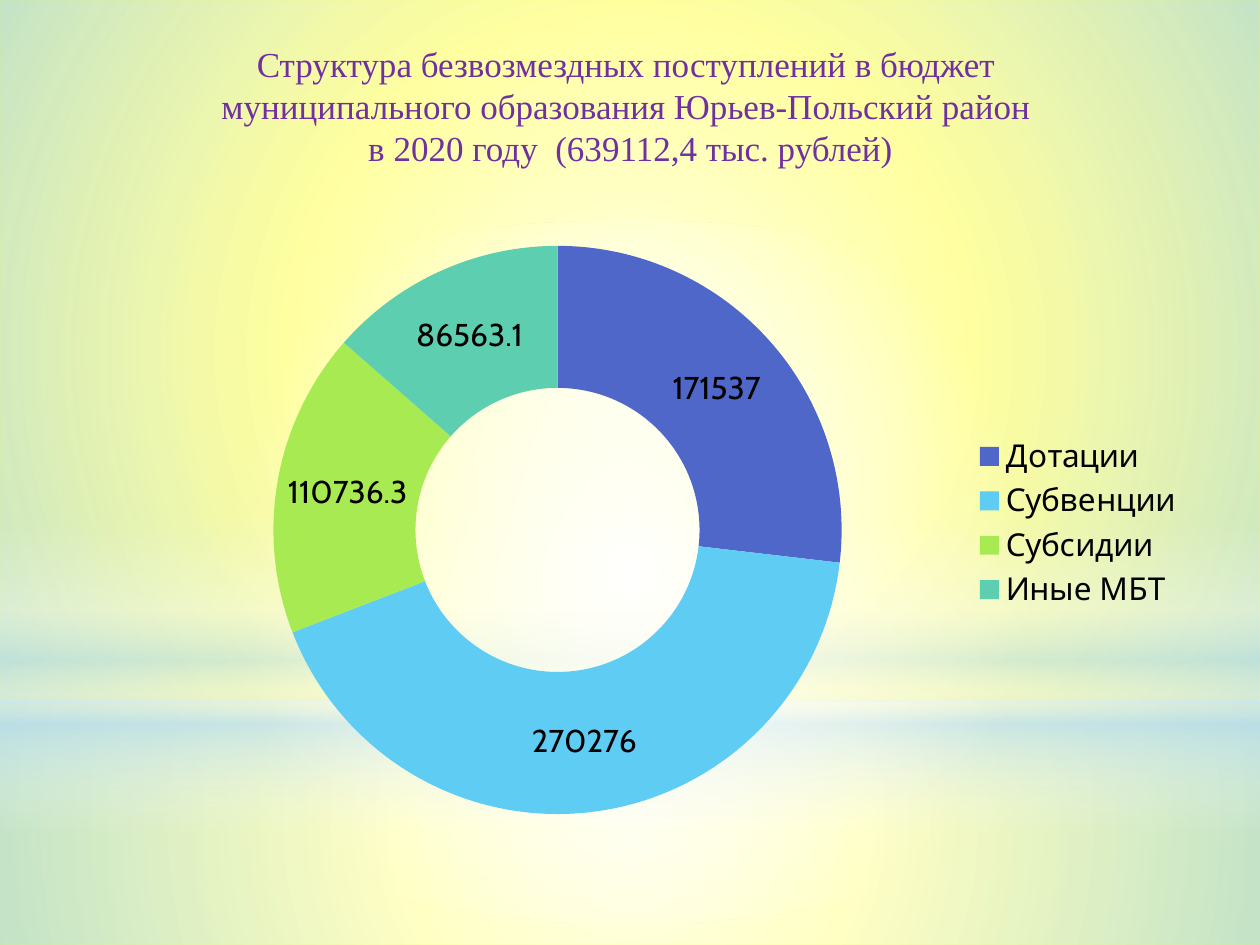
"""Build a slide with a doughnut chart of budget transfers on a glowing yellow background."""
from lxml import etree
from pptx import Presentation
from pptx.chart.data import CategoryChartData
from pptx.dml.color import RGBColor
from pptx.enum.chart import XL_CHART_TYPE, XL_LEGEND_POSITION
from pptx.enum.shapes import MSO_SHAPE
from pptx.enum.text import MSO_ANCHOR, PP_ALIGN
from pptx.oxml import parse_xml
from pptx.oxml.ns import nsdecls, qn
from pptx.util import Cm, Pt

RECTANGLE, OVAL = MSO_SHAPE.RECTANGLE, MSO_SHAPE.OVAL
DOUGHNUT = XL_CHART_TYPE.DOUGHNUT
LEGEND_RIGHT = XL_LEGEND_POSITION.RIGHT
CENTER, TOP = PP_ALIGN.CENTER, MSO_ANCHOR.TOP

COLORS = {
    "background": "FFFF00",
    "white": "FFFFFF",
    "blue": "B4DCFA",
    "title": "7030A0",
    "text": "000000",
}
TITLE_LINES = [
    "Структура безвозмездных поступлений в бюджет ",
    "муниципального образования Юрьев-Польский район ",
    "в 2020 году  (639112,4 тыс. рублей)",
]
TRANSFERS = [
    ("Дотации", 171537, "4E67C8"),
    ("Субвенции", 270276, "5ECCF3"),
    ("Субсидии", 110736.3, "A7EA52"),
    ("Иные МБТ", 86563.1, "5DCEAF"),
]
RADIAL = '<a:path path="circle"><a:fillToRect l="50000" t="50000" r="50000" b="50000"/></a:path>'
VERTICAL = '<a:lin ang="5400000" scaled="0"/>'
GLOWS = [
    (RECTANGLE, 14.17, 4.88, RADIAL,
     [(0, "white", 91), (37, "white", 76), (100, "blue", 79)]),
    (RECTANGLE, 0, 14.17, RADIAL,
     [(0, "white", 89), (48, "white", 62), (100, "blue", 79)]),
    (RECTANGLE, 10.46, 6.35, VERTICAL,
     [(0, "white", 0), (29, "white", 30), (45, "blue", 40),
      (55, "white", 26), (65, "blue", 60), (100, "white", 0)]),
    (OVAL, 4.45, 14.17, RADIAL, [(0, "white", 100), (56, "white", 0)]),
]


def gradient_fill(stops, direction):
    stop_xml = "".join(
        f'<a:gs pos="{position * 1000}"><a:srgbClr val="{COLORS[color]}">'
        f'<a:alpha val="{opacity * 1000}"/></a:srgbClr></a:gs>'
        for position, color, opacity in stops
    )
    return parse_xml(
        f'<a:gradFill {nsdecls("a")} rotWithShape="1">'
        f"<a:gsLst>{stop_xml}</a:gsLst>{direction}</a:gradFill>"
    )


presentation = Presentation()
presentation.slide_width = Cm(25.4)
presentation.slide_height = Cm(19.05)
slide = presentation.slides.add_slide(presentation.slide_layouts[6])
slide.background.fill.solid()
slide.background.fill.fore_color.rgb = RGBColor.from_string(COLORS["background"])

for preset, top, height, direction, stops in GLOWS:
    glow = slide.shapes.add_shape(preset, Cm(0), Cm(top), Cm(25.4), Cm(height))
    glow.shadow.inherit = False
    glow.line.fill.background()
    geometry = glow.element.spPr.find(qn("a:prstGeom"))
    geometry.addnext(gradient_fill(stops, direction))

title = slide.shapes.add_textbox(Cm(0.71), Cm(0.74), Cm(24), Cm(3.68))
text_frame = title.text_frame
text_frame.word_wrap = True
text_frame.vertical_anchor = TOP
text_frame.text = "\n".join(TITLE_LINES)
for paragraph in text_frame.paragraphs:
    paragraph.alignment = CENTER
    paragraph.line_spacing = Pt(24)
    font = paragraph.runs[0].font
    font.name = "Times New Roman"
    font.size = Pt(20)
    font.color.rgb = RGBColor.from_string(COLORS["title"])

chart_data = CategoryChartData()
chart_data.categories = [name for name, value, color in TRANSFERS]
chart_data.add_series("Series 1", [value for name, value, color in TRANSFERS])
chart = slide.shapes.add_chart(
    DOUGHNUT, Cm(2.11), Cm(3.56), Cm(22), Cm(13.97), chart_data
).chart
chart.has_title = False
chart.font.name = "Cabin"
chart.font.size = Pt(18)
chart.font.color.rgb = RGBColor.from_string(COLORS["text"])
chart.has_legend = True
chart.legend.position = LEGEND_RIGHT
chart.legend.include_in_layout = False

plot = chart.plots[0]
plot.vary_by_categories = True
plot.has_data_labels = True
plot.data_labels.show_value = True
plot.data_labels.show_percentage = False
for index, (name, value, color) in enumerate(TRANSFERS):
    point_format = plot.series[0].points[index].format
    point_format.fill.solid()
    point_format.fill.fore_color.rgb = RGBColor.from_string(color)
    point_format.line.fill.background()

plot_area = chart.element.find(".//" + qn("c:plotArea"))
for old_layout in plot_area.findall(qn("c:layout")):
    plot_area.remove(old_layout)
layout = etree.Element(qn("c:layout"))
manual = etree.SubElement(layout, qn("c:manualLayout"))
settings = [("layoutTarget", "inner"), ("xMode", "edge"), ("yMode", "edge"),
            ("x", "0.08"), ("y", "0.1"), ("w", "0.67"), ("h", "0.82")]
for setting, value in settings:
    etree.SubElement(manual, qn(f"c:{setting}")).set("val", value)
plot_area.insert(0, layout)

presentation.save("out.pptx")
